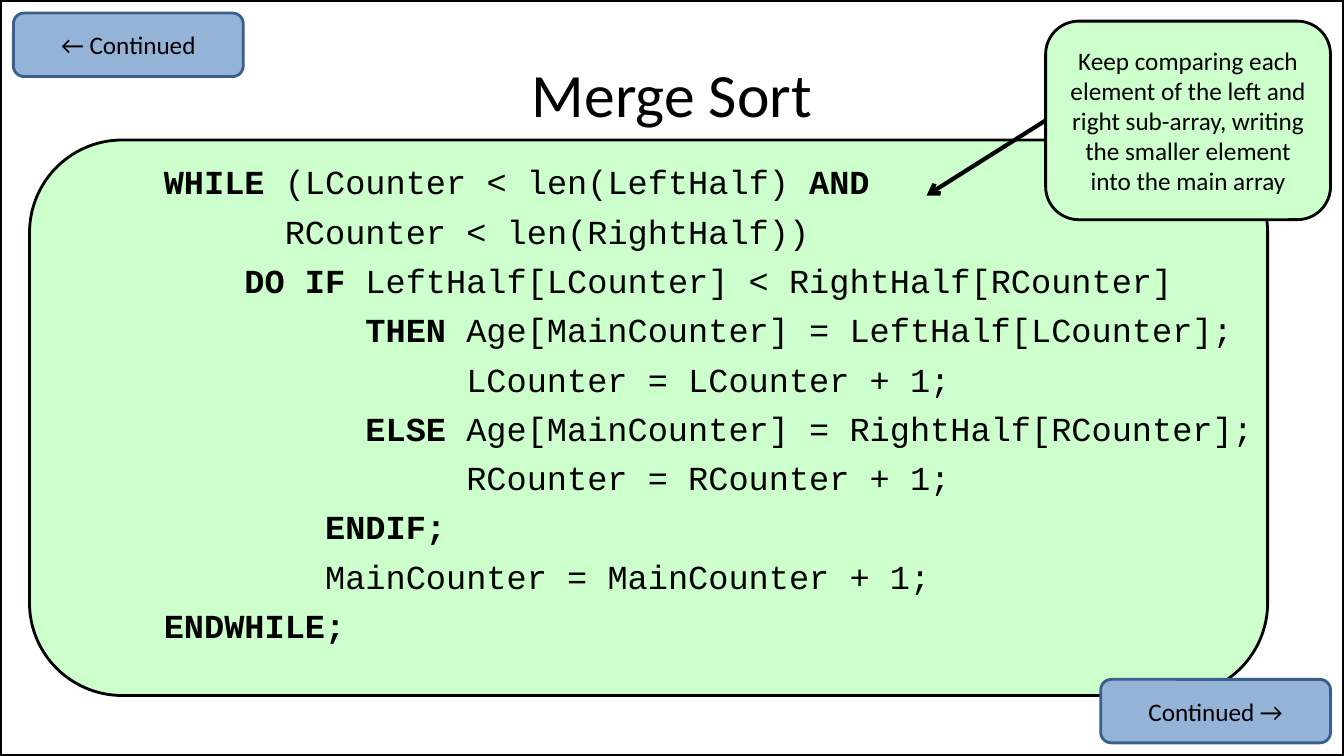
from lxml import etree
from pptx import Presentation
from pptx.dml.color import RGBColor
from pptx.enum.shapes import MSO_CONNECTOR, MSO_SHAPE
from pptx.enum.text import MSO_ANCHOR, PP_ALIGN
from pptx.oxml.ns import qn
from pptx.util import Inches, Pt

RECT, ROUNDED = MSO_SHAPE.RECTANGLE, MSO_SHAPE.ROUNDED_RECTANGLE
STRAIGHT = MSO_CONNECTOR.STRAIGHT
MIDDLE, CENTER = MSO_ANCHOR.MIDDLE, PP_ALIGN.CENTER
WIDTH, HEIGHT = Inches(13.33), Inches(7.5)
BLACK, GREEN, BLUE, NAVY = "000000", "CCFFCC", "95B3D7", "3A5F8C"
MARGIN_X, MARGIN_Y = 1, 1.73
BUTTON_W, BUTTON_H = 17.1, 8.4
CODE_CHAR = 0.2

CODE = [
    (4, "WHILE", " (LCounter < len(LeftHalf) ", "AND"),
    (10, "", "RCounter < len(RightHalf))", ""),
    (8, "DO IF ", "LeftHalf[LCounter] < RightHalf[RCounter]", ""),
    (14, "THEN ", "Age[MainCounter] = LeftHalf[LCounter];", ""),
    (19, "", "LCounter = LCounter + 1;", ""),
    (14, "ELSE", " Age[MainCounter] = RightHalf[RCounter];", ""),
    (19, "", "RCounter = RCounter + 1;", ""),
    (12, "ENDIF;", "", ""),
    (12, "", "MainCounter = MainCounter + 1;", ""),
    (4, "ENDWHILE;", "", ""),
]


def color(value):
    """Turn a hex string into a colour."""
    return RGBColor.from_string(value)


def area(*shares):
    """Turn left, top, width and height in percent of the slide into lengths."""
    return [int(size * share / 100)
            for size, share in zip((WIDTH, HEIGHT) * 2, shares)]


def set_font(p, name, size):
    """Set the black font of a paragraph."""
    p.font.name, p.font.size = name, Pt(size)
    p.font.color.rgb = color(BLACK)


def write_centered(s, text, size):
    """Write one centred paragraph into a shape."""
    tf = s.text_frame
    tf.word_wrap, tf.vertical_anchor = True, MIDDLE
    p = tf.paragraphs[0]
    p.text, p.alignment = text, CENTER
    set_font(p, "Calibri", size)


def add_box(sp, kind, shares, fill=None, line=BLACK, width=2, text=""):
    """Add an outlined shape with optional fill and label."""
    s = sp.add_shape(kind, *area(*shares))
    s.shadow.inherit = False
    s.line.color.rgb, s.line.width = color(line), Pt(width)
    if fill:
        s.fill.solid()
        s.fill.fore_color.rgb = color(fill)
    else:
        s.fill.background()
    if text:
        write_centered(s, text, 18)
    return s


def add_button(sp, left, top, text):
    """Add a navigation button."""
    add_box(sp, ROUNDED, (left, top, BUTTON_W, BUTTON_H), BLUE, NAVY, text=text)


def add_title(sp, shares, text):
    """Add the slide title."""
    write_centered(sp.add_textbox(*area(*shares)), text, 44)


def add_code(sp, shares, lines):
    """Add the listing, indented by character columns, with bold keywords."""
    tf = sp.add_textbox(*area(*shares)).text_frame
    tf.word_wrap = True
    for i, (column, keyword, body, ending) in enumerate(lines):
        p = tf.add_paragraph() if i else tf.paragraphs[0]
        p.space_before = Pt(6.4)
        set_font(p, "Courier New", 24)
        pPr = p._p.get_or_add_pPr()
        pPr.set("marL", str(Inches(0.06 + column * CODE_CHAR)))
        pPr.set("indent", "0")
        for text, bold in ((keyword, True), (body, False), (ending, True)):
            if text:
                r = p.add_run()
                r.text, r.font.bold = text, bold


def add_pointer(sp, source, x, y):
    """Draw an arrow from the left side of a shape to a point."""
    end_x, end_y = area(x, y)
    s = sp.add_connector(STRAIGHT, source.left, source.top, end_x, end_y)
    s.begin_connect(source, 1)
    s.line.color.rgb, s.line.width = color(BLACK), Pt(3)
    etree.SubElement(s.line._get_or_add_ln(), qn("a:tailEnd"), type="arrow")
    etree.SubElement(s._element.spPr, qn("a:effectLst"))


def main():
    """Build and save the slide."""
    prs = Presentation()
    prs.slide_width, prs.slide_height = WIDTH, HEIGHT
    sp = prs.slides.add_slide(prs.slide_layouts[6]).shapes
    add_box(sp, RECT, (0, 0, 100, 100), width=3)
    add_box(sp, ROUNDED, (2.2, 18.53, 92.12, 73.47), GREEN)
    add_code(sp, (5, 20.67, 90, 66), CODE)
    add_title(sp, (5, 4, 90, 16.67), "Merge Sort")
    add_button(sp, 100 - MARGIN_X - BUTTON_W, 100 - MARGIN_Y - BUTTON_H,
               "Continued →")
    add_button(sp, MARGIN_X, MARGIN_Y, "← Continued")
    callout = add_box(
        sp, ROUNDED, (77.8, 2.8, 21.2, 26.27), GREEN,
        text="Keep comparing each element of the left and right sub-array, "
             "writing the smaller element into the main array")
    add_pointer(sp, callout, 68.94, 25.87)
    prs.save("out.pptx")


if __name__ == "__main__":
    main()
